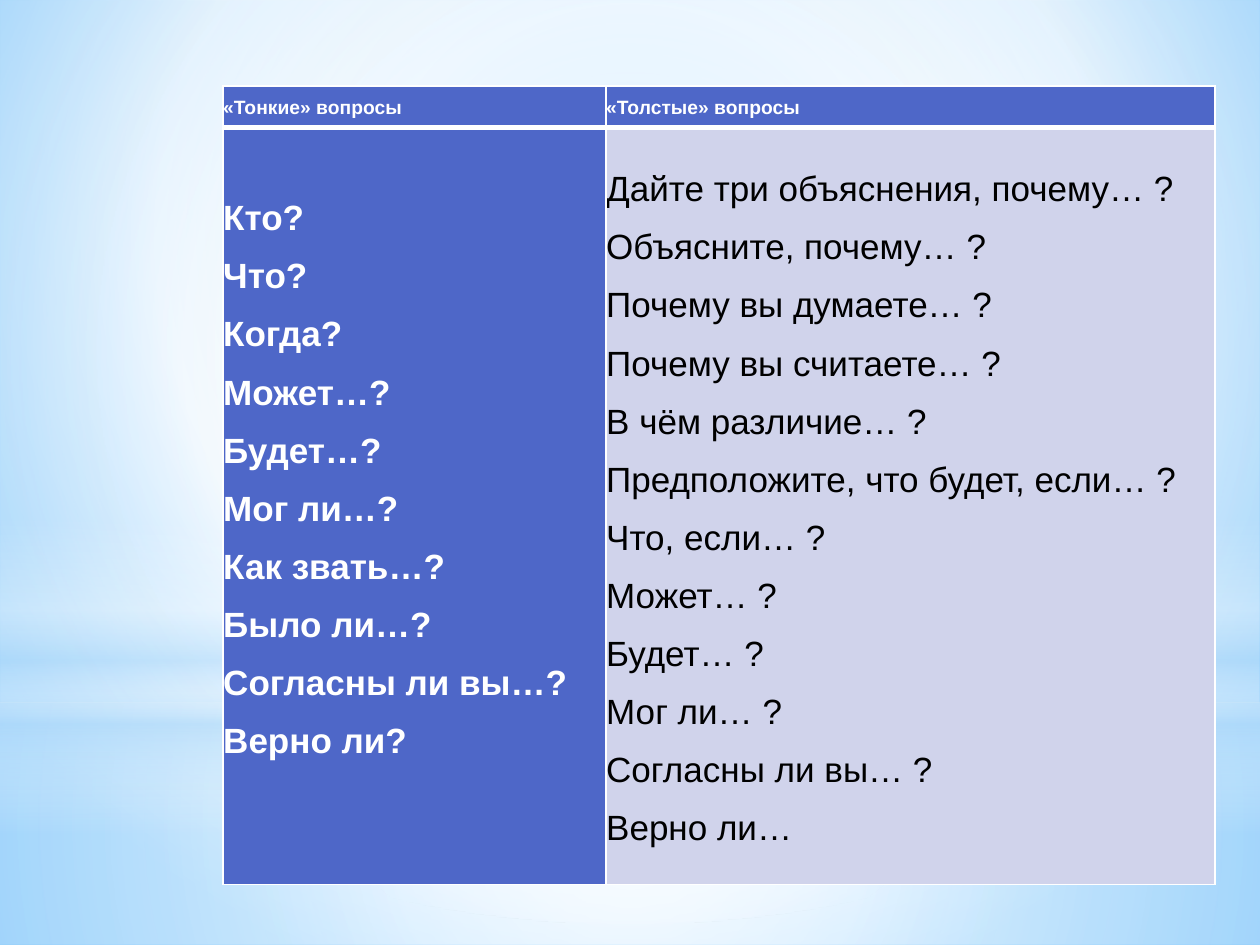
from dataclasses import dataclass

from pptx import Presentation
from pptx.dml.color import RGBColor as Rgb
from pptx.enum.shapes import MSO_SHAPE as Kind
from pptx.enum.text import MSO_ANCHOR as Anchor
from pptx.oxml import parse_xml
from pptx.oxml.ns import nsdecls
from pptx.util import Cm, Pt

COLORS = {
    "white": "FFFFFF", "black": "000000", "blue": "4E67C8", "lilac": "D0D3EB",
    "sky": "9ED5FF", "deep": "5BB9FF", "pale": "B4DCFA",
}
MID = (50, 50, 50, 50)
Stops = list[tuple[int, str, int]]  # position, colour name, opacity


@dataclass
class Glow:
    kind: Kind
    top: float
    height: float
    stops: Stops
    focus: tuple | None = MID  # None gives a vertical linear gradient


@dataclass
class Block:
    row: int
    col: int
    lines: list[str]
    size: int
    ink: str
    fill: str
    bold: bool = True
    foot: float = 0


GLOWS = [
    Glow(Kind.RECTANGLE, 14.17, 4.88,
         [(0, "white", 91), (37, "white", 76), (100, "pale", 79)]),
    Glow(Kind.RECTANGLE, 0, 14.17,
         [(0, "white", 89), (48, "white", 62), (100, "pale", 79)]),
    Glow(Kind.RECTANGLE, 10.46, 6.35,
         [(0, "white", 0), (29, "white", 30), (45, "pale", 40),
          (55, "white", 26), (65, "pale", 60), (100, "white", 0)], None),
    Glow(Kind.OVAL, 4.45, 14.17, [(0, "white", 100), (56, "white", 0)]),
]

THIN = ["Кто?", "Что?", "Когда?", "Может…?", "Будет…?", "Мог ли…?",
        "Как звать…?", "Было ли…?", "Согласны ли вы…?", "Верно ли?"]
THICK = ["Дайте три объяснения, почему… ?", "Объясните, почему… ?",
         "Почему вы думаете… ?", "Почему вы считаете… ?",
         "В чём различие… ?", "Предположите, что будет, если… ?",
         "Что, если… ?", "Может… ?", "Будет… ?", "Мог ли… ?",
         "Согласны ли вы… ?", "Верно ли…"]
BLOCKS = [
    Block(0, 0, ["«Тонкие» вопросы"], 11, "white", "blue"),
    Block(0, 1, ["«Толстые» вопросы"], 11, "white", "blue"),
    Block(1, 0, THIN, 20, "white", "blue", foot=1.17),
    Block(1, 1, THICK, 20, "black", "lilac", bold=False),
]


def shade(owner, fill, stops: Stops, focus: tuple | None) -> None:
    """Swap a solid fill for a gradient with its own stops and opacity."""
    fill.solid()
    fill.fore_color.rgb = Rgb.from_string(COLORS["white"])
    marks = "".join(
        f'<a:gs pos="{pos * 1000}"><a:srgbClr val="{COLORS[name]}">'
        f'<a:alpha val="{alpha * 1000}"/></a:srgbClr></a:gs>'
        for pos, name, alpha in stops)
    if focus:
        sides = " ".join(f'{s}="{v * 1000}"' for s, v in zip("ltrb", focus))
        way = f'<a:path path="circle"><a:fillToRect {sides}/></a:path>'
    else:
        way = '<a:lin ang="5400000" scaled="0"/>'
    grad = parse_xml(f'<a:gradFill {nsdecls("a")} rotWithShape="1">'
                     f'<a:gsLst>{marks}</a:gsLst>{way}</a:gradFill>')
    old = owner.element.xpath(".//a:solidFill")[0]
    old.getparent().replace(old, grad)


def add_glow(slide, glow: Glow) -> None:
    shape = slide.shapes.add_shape(
        glow.kind, 0, Cm(glow.top), Cm(25.4), Cm(glow.height))
    shape.shadow.inherit = False
    shape.line.fill.background()
    shade(shape, shape.fill, glow.stops, glow.focus)


def add_edges(cell, row: int) -> None:
    widths = {"L": 1, "R": 1, "T": 3 if row else 1, "B": 1 if row else 3}
    props = cell._tc.get_or_add_tcPr()
    for spot, (side, width) in enumerate(widths.items()):
        props.insert(spot, parse_xml(
            f'<a:ln{side} {nsdecls("a")} w="{Pt(width)}"><a:solidFill>'
            f'<a:srgbClr val="{COLORS["white"]}"/></a:solidFill></a:ln{side}>'))


def fill_cell(cell, block: Block) -> None:
    cell.fill.solid()
    cell.fill.fore_color.rgb = Rgb.from_string(COLORS[block.fill])
    cell.margin_left = cell.margin_right = cell.margin_top = 0
    cell.margin_bottom = Cm(block.foot)
    cell.vertical_anchor = Anchor.MIDDLE
    add_edges(cell, block.row)
    frame = cell.text_frame
    for i, line in enumerate(block.lines):
        para = frame.add_paragraph() if i else frame.paragraphs[0]
        para.line_spacing = 1.15
        para.space_after = Pt(7.5)
        run = para.add_run()
        run.text = line
        font = run.font
        font.name, font.size, font.bold = "Arial", Pt(block.size), block.bold
        font.color.rgb = Rgb.from_string(COLORS[block.ink])


def main() -> None:
    deck = Presentation()
    deck.slide_width, deck.slide_height = Cm(25.4), Cm(19.05)
    slide = deck.slides.add_slide(deck.slide_layouts[6])
    shade(slide, slide.background.fill,
          [(0, "sky", 100), (60, "white", 100), (100, "deep", 100)],
          (20, 10, 20, 60))
    for glow in GLOWS:
        add_glow(slide, glow)
    table = slide.shapes.add_table(
        2, 2, Cm(4.5), Cm(1.73), Cm(19.99), Cm(16.1)).table
    for col, width in zip(table.columns, (7.72, 12.27)):
        col.width = Cm(width)
    for row, height in zip(table.rows, (0.84, 15.26)):
        row.height = Cm(height)
    for block in BLOCKS:
        fill_cell(table.cell(block.row, block.col), block)
    deck.save("out.pptx")


if __name__ == "__main__":
    main()
